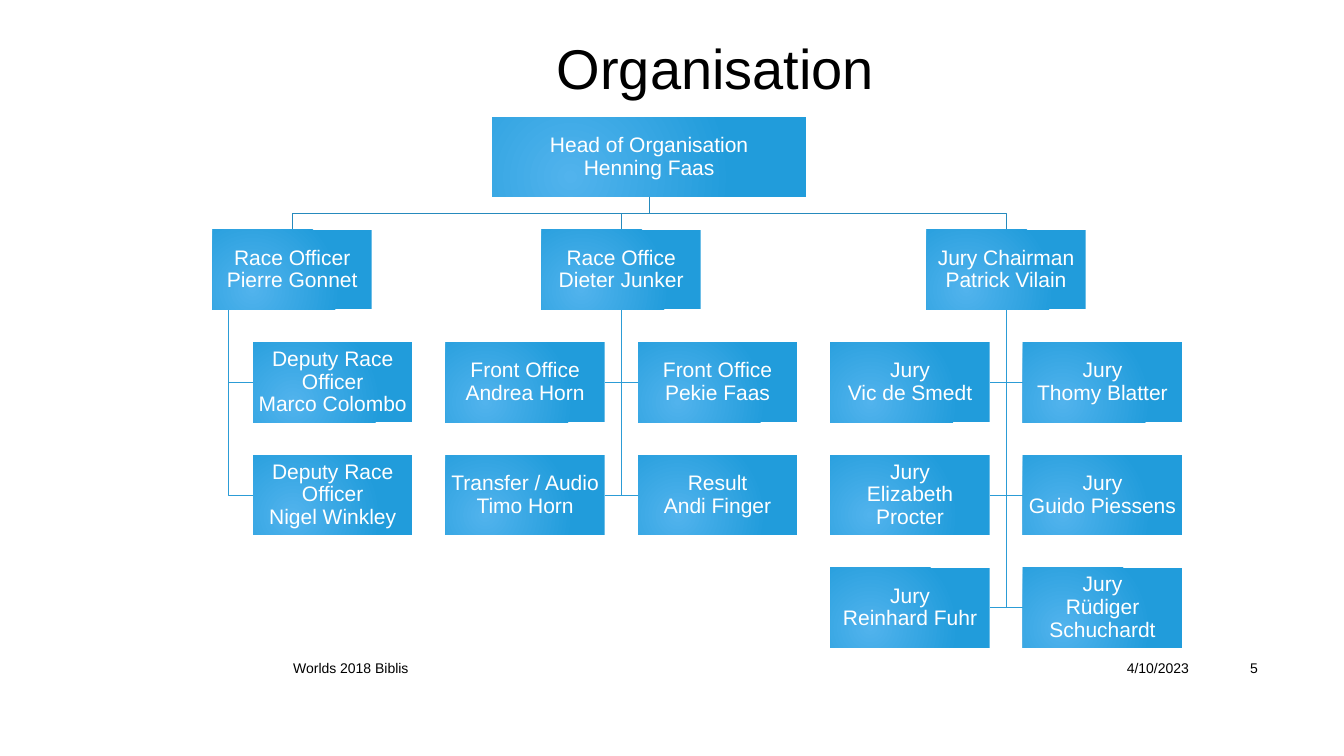
"""Build the organisation chart slide of the championship team."""
from dataclasses import dataclass

from lxml.etree import SubElement
from pptx import Presentation
from pptx.dml.color import RGBColor
from pptx.enum.shapes import MSO_SHAPE as Preset
from pptx.enum.text import MSO_ANCHOR as Anchor, PP_ALIGN as Align
from pptx.oxml.ns import qn
from pptx.shapes.autoshape import Shape
from pptx.shapes.shapetree import SlideShapes
from pptx.util import Cm, Pt

COLOURS = {
    "text": "000000",
    "box_text": "FFFFFF",
    "box_light": "51B3ED",
    "box_dark": "219CDB",
    "top_line": "268ABD",
    "branch_line": "2C9CD6",
}
FONT = "Arial"
BOX_WIDTH, BOX_HEIGHT = 4.01, 2.01
FIRST_COLUMN, COLUMN_STEP = 6.38, 4.85
FIRST_ROW, ROW_STEP = 2.95, 2.84
HEAD_LEFT, HEAD_WIDTH = 12.4, 7.92
INSET = 0.03


@dataclass(frozen=True)
class Member:
    role: str
    name: str
    column: int = 0
    row: int = 0

    @property
    def left(self) -> float:
        return FIRST_COLUMN + self.column * COLUMN_STEP

    @property
    def top(self) -> float:
        return row_top(self.row)


@dataclass(frozen=True)
class Branch:
    lead: Member
    left: float
    stem_share: float
    reports: tuple[Member, ...]

    @property
    def stem(self) -> float:
        return self.left + self.stem_share * BOX_WIDTH


@dataclass(frozen=True)
class Label:
    text: str
    left: float
    top: float
    width: float
    height: float
    size: int
    align: Align


HEAD = Member("Head of Organisation", "Henning Faas")
BRANCHES = (
    Branch(Member("Race Officer", "Pierre Gonnet"), 5.36, 0.1, (
        Member("Deputy Race Officer", "Marco Colombo", 0, 2),
        Member("Deputy Race Officer", "Nigel Winkley", 0, 3),
    )),
    Branch(Member("Race Office", "Dieter Junker"), 13.65, 0.5, (
        Member("Front Office", "Andrea Horn", 1, 2),
        Member("Front Office", "Pekie Faas", 2, 2),
        Member("Transfer / Audio", "Timo Horn", 1, 3),
        Member("Result", "Andi Finger", 2, 3),
    )),
    Branch(Member("Jury Chairman", "Patrick Vilain"), 23.35, 0.5, (
        Member("Jury", "Vic de Smedt", 3, 2),
        Member("Jury", "Thomy Blatter", 4, 2),
        Member("Jury", "Elizabeth Procter", 3, 3),
        Member("Jury", "Guido Piessens", 4, 3),
        Member("Jury", "Reinhard Fuhr", 3, 4),
        Member("Jury", "Rüdiger Schuchardt", 4, 4),
    )),
)
LABELS = (
    Label("Organisation", 4.11, 0.69, 27.84, 2.01, 40, Align.CENTER),
    Label("4/10/2023", 27.03, 16.33, 3.18, 1.02, 10, Align.RIGHT),
    Label("Worlds 2018 Biblis", 7.14, 16.33, 19.69, 1.02, 10, Align.LEFT),
    Label("5", 30.43, 16.31, 1.52, 1.02, 10, Align.RIGHT),
)


def row_top(row: int) -> float:
    return FIRST_ROW + row * ROW_STEP


def write(shape: Shape, text: str, size: int, colour: str, align: Align) -> None:
    frame = shape.text_frame
    frame.word_wrap = True
    frame.vertical_anchor = Anchor.MIDDLE
    paragraph = frame.paragraphs[0]
    paragraph.text = text
    paragraph.alignment = align
    for run in paragraph.runs:
        run.font.name = FONT
        run.font.size = Pt(size)
        run.font.color.rgb = RGBColor.from_string(COLOURS[colour])


def fill_radial(shape: Shape) -> None:
    shape.fill.gradient()
    for stop, colour in zip(shape.fill.gradient_stops, ("box_light", "box_dark")):
        stop.color.rgb = RGBColor.from_string(COLOURS[colour])
    gradient = shape.element.spPr.find(qn("a:gradFill"))
    gradient.remove(gradient.find(qn("a:lin")))
    circle = SubElement(gradient, qn("a:path"), {"path": "circle"})
    SubElement(circle, qn("a:fillToRect"),
               {"l": "50000", "t": "100000", "r": "100000", "b": "50000"})


def draw_box(shapes: SlideShapes, member: Member, left: float, top: float,
             width: float = BOX_WIDTH) -> None:
    box = shapes.add_shape(Preset.RECTANGLE, Cm(left), Cm(top), Cm(width), Cm(BOX_HEIGHT))
    box.shadow.inherit = False
    box.line.fill.background()
    fill_radial(box)
    frame = box.text_frame
    frame.margin_left = frame.margin_right = Cm(INSET)
    frame.margin_top = frame.margin_bottom = Cm(INSET)
    write(box, f"{member.role}\n{member.name}", 15, "box_text", Align.CENTER)
    frame.paragraphs[0].line_spacing = 0.9


def draw_elbow(shapes: SlideShapes, points: list[tuple[float, float]], colour: str) -> None:
    start, *corners = [(Cm(x), Cm(y)) for x, y in points]
    builder = shapes.build_freeform(*start)
    builder.add_line_segments(corners, close=False)
    elbow = builder.convert_to_shape()
    elbow.shadow.inherit = False
    elbow.fill.background()
    elbow.line.color.rgb = RGBColor.from_string(COLOURS[colour])
    elbow.line.width = Pt(0.75)


def draw_branch_lines(shapes: SlideShapes, branch: Branch) -> None:
    head_middle = HEAD_LEFT + HEAD_WIDTH / 2
    lead_middle = branch.left + BOX_WIDTH / 2
    head_bottom, lead_top = row_top(0) + BOX_HEIGHT, row_top(1)
    bar = (head_bottom + lead_top) / 2
    draw_elbow(shapes, [(head_middle, head_bottom), (head_middle, bar),
                        (lead_middle, bar), (lead_middle, lead_top)], "top_line")
    for report in branch.reports:
        on_right = report.left > branch.stem
        end = report.left if on_right else report.left + BOX_WIDTH
        middle = report.top + BOX_HEIGHT / 2
        draw_elbow(shapes, [(branch.stem, lead_top + BOX_HEIGHT),
                            (branch.stem, middle), (end, middle)], "branch_line")


def draw_label(shapes: SlideShapes, label: Label) -> None:
    box = shapes.add_textbox(Cm(label.left), Cm(label.top), Cm(label.width), Cm(label.height))
    write(box, label.text, label.size, "text", label.align)


def main() -> None:
    deck = Presentation()
    deck.slide_width, deck.slide_height = Cm(33.87), Cm(19.05)
    shapes = deck.slides.add_slide(deck.slide_layouts[6]).shapes
    for branch in BRANCHES:
        draw_branch_lines(shapes, branch)
    draw_box(shapes, HEAD, HEAD_LEFT, row_top(0), HEAD_WIDTH)
    for branch in BRANCHES:
        draw_box(shapes, branch.lead, branch.left, row_top(1))
        for report in branch.reports:
            draw_box(shapes, report, report.left, report.top)
    for label in LABELS:
        draw_label(shapes, label)
    deck.save("out.pptx")


if __name__ == "__main__":
    main()
